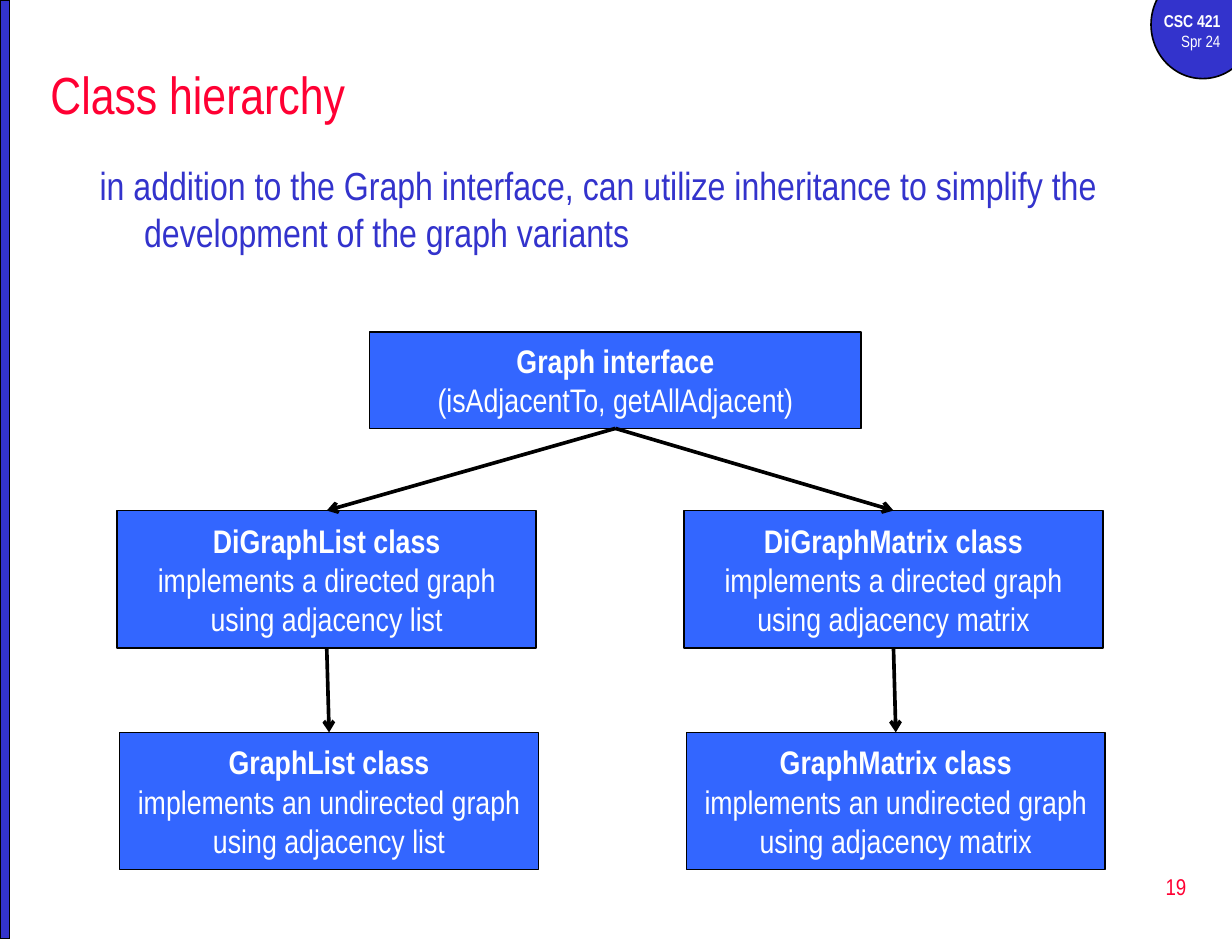
from dataclasses import dataclass

from lxml.etree import SubElement
from pptx import Presentation
from pptx.dml.color import RGBColor
from pptx.enum.shapes import MSO_CONNECTOR, MSO_SHAPE
from pptx.enum.text import MSO_ANCHOR, MSO_AUTO_SIZE, PP_ALIGN
from pptx.oxml.ns import qn
from pptx.util import Inches, Pt


@dataclass(frozen=True)
class Theme:
    font: str = "Arial Narrow"
    accent: RGBColor = RGBColor(0xFF, 0x00, 0x33)
    primary: RGBColor = RGBColor(0x33, 0x33, 0xCC)
    box: RGBColor = RGBColor(0x33, 0x66, 0xFF)
    light: RGBColor = RGBColor(0xFF, 0xFF, 0xFF)
    dark: RGBColor = RGBColor(0x00, 0x00, 0x00)
    title_size: float = 32
    intro_size: float = 24
    box_size: float = 20
    number_size: float = 14
    course_size: float = 10.5
    term_size: float = 10
    outline: float = 1
    arrow: float = 2.25


THEME = Theme()
WIDTH, HEIGHT = 10.5, 8

# Class grid: two columns, two rows; the lower row is shifted slightly right.
COLUMN_LEFT, COLUMN_STEP = 1, 4.83
ROW_TOP, ROW_STEP, ROW_SHIFT = 4.35, 1.89, 0.02
CLASS_WIDTH, CLASS_HEIGHT = 3.57, 1.17

STRUCTURES = ("List", "Matrix")
GRAPH_KINDS = (("DiGraph", "a directed"), ("Graph", "an undirected"))


def inches(*lengths):
    return [Inches(length) for length in lengths]


def style_paragraph(paragraph, size, color, align=PP_ALIGN.LEFT, bold=False):
    paragraph.alignment = align
    font = paragraph.font
    font.name, font.size, font.bold = THEME.font, Pt(size), bold
    font.color.rgb = color


def write_lines(frame, lines, color, align=PP_ALIGN.LEFT, anchor=MSO_ANCHOR.TOP):
    """Fill a text frame from (text, size, bold) lines."""
    frame.word_wrap = True
    frame.auto_size = MSO_AUTO_SIZE.NONE
    frame.vertical_anchor = anchor
    frame.text = "\n".join(text for text, _, _ in lines)
    for paragraph, (_, size, bold) in zip(frame.paragraphs, lines):
        style_paragraph(paragraph, size, color, align, bold)


def add_text(slide, at, lines, color, **layout):
    frame = slide.shapes.add_textbox(*inches(*at)).text_frame
    write_lines(frame, lines, color, **layout)
    return frame


def add_outlined(slide, preset, at, fill):
    shape = slide.shapes.add_shape(preset, *inches(*at))
    shape.shadow.inherit = False
    shape.fill.solid()
    shape.fill.fore_color.rgb = fill
    shape.line.color.rgb = THEME.dark
    shape.line.width = Pt(THEME.outline)
    return shape


def add_type_box(slide, at, name, description):
    box = add_outlined(slide, MSO_SHAPE.RECTANGLE, at, THEME.box)
    lines = [(name, THEME.box_size, True), (description, THEME.box_size, False)]
    write_lines(box.text_frame, lines, THEME.light, PP_ALIGN.CENTER, MSO_ANCHOR.MIDDLE)
    return box


def add_arrow(slide, parent, child):
    """Join the bottom of the parent to the top of the child."""
    arrow = slide.shapes.add_connector(MSO_CONNECTOR.STRAIGHT, 0, 0, 0, 0)
    arrow.begin_connect(parent, 2)
    arrow.end_connect(child, 0)
    arrow.line.color.rgb = THEME.dark
    arrow.line.width = Pt(THEME.arrow)
    properties = arrow.line._get_or_add_ln()
    SubElement(properties, qn("a:tailEnd"), type="arrow")
    SubElement(properties.getparent(), qn("a:effectLst"))


def add_frame(slide):
    """Add the course badge, the side stripe and the page number."""
    add_outlined(slide, MSO_SHAPE.OVAL, (9.81, -0.25, 0.88, 0.92), THEME.primary)
    course = [("CSC 421", THEME.course_size, True), ("Spr 24", THEME.term_size, False)]
    add_text(slide, (9.67, 0.04, 0.83, 0.46), course, THEME.light, align=PP_ALIGN.RIGHT)
    add_outlined(slide, MSO_SHAPE.RECTANGLE, (0, 0, 0.08, HEIGHT), THEME.primary)
    add_text(slide, (8.02, 7.29, 2.19, 0.53), [("19", THEME.number_size, False)],
             THEME.accent, align=PP_ALIGN.RIGHT, anchor=MSO_ANCHOR.MIDDLE)


def set_title(slide, text):
    title = slide.shapes.title
    title.left, title.top, title.width, title.height = inches(0.33, 0.42, 9.92, 0.75)
    write_lines(title.text_frame, [(text, THEME.title_size, False)], THEME.accent,
                anchor=MSO_ANCHOR.MIDDLE)


def add_intro(slide, text):
    frame = add_text(slide, (0.75, 1.33, 9.05, 0.96),
                     [(text, THEME.intro_size, False)], THEME.primary)
    paragraph = frame.paragraphs[0]
    paragraph.space_before = Pt(0.2 * THEME.intro_size)
    hanging = paragraph._p.get_or_add_pPr()
    hanging.set("marL", str(Inches(0.38)))
    hanging.set("indent", str(-Inches(0.38)))


def add_hierarchy(slide):
    interface = add_type_box(slide, (3.15, 2.83, 4.19, 0.82),
                             "Graph interface", "(isAdjacentTo, getAllAdjacent)")
    for column, structure in enumerate(STRUCTURES):
        parent = interface
        for row, (prefix, kind) in enumerate(GRAPH_KINDS):
            left = COLUMN_LEFT + column * COLUMN_STEP + row * ROW_SHIFT
            top = ROW_TOP + row * ROW_STEP
            child = add_type_box(
                slide, (left, top, CLASS_WIDTH, CLASS_HEIGHT),
                f"{prefix}{structure} class",
                f"implements {kind} graph using adjacency {structure.lower()}")
            add_arrow(slide, parent, child)
            parent = child


def main():
    deck = Presentation()
    deck.slide_width, deck.slide_height = inches(WIDTH, HEIGHT)
    slide = deck.slides.add_slide(deck.slide_layouts.get_by_name("Title Only"))
    add_frame(slide)
    set_title(slide, "Class hierarchy")
    add_intro(slide, "in addition to the Graph interface, can utilize inheritance "
                     "to simplify the development of the graph variants")
    add_hierarchy(slide)
    deck.save("out.pptx")


if __name__ == "__main__":
    main()
